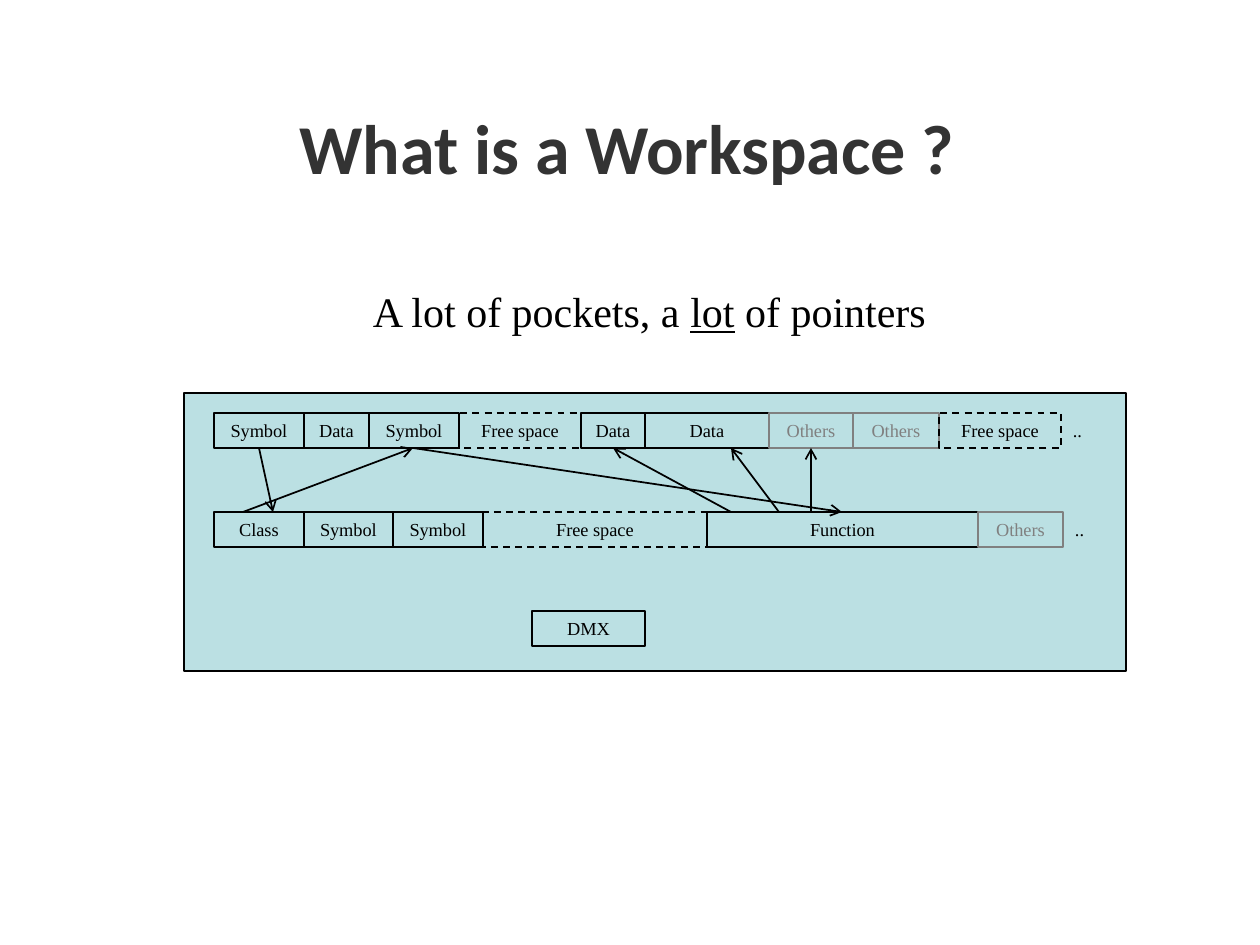
from dataclasses import dataclass

from lxml.etree import SubElement
from pptx import Presentation
from pptx.dml.color import RGBColor
from pptx.enum.dml import MSO_LINE
from pptx.enum.shapes import MSO_CONNECTOR, MSO_SHAPE
from pptx.enum.text import MSO_ANCHOR, PP_ALIGN
from pptx.oxml.ns import qn
from pptx.util import Inches, Pt

SCALE = Inches(1) / 126


@dataclass(frozen=True)
class Theme:
    ink: str = "000000"
    muted: str = "808080"
    heading: str = "333333"
    panel: str = "BBE0E3"
    heading_font: str = "Calibri"
    body_font: str = "Times New Roman"
    title_size: float = 40
    lead_size: float = 24
    label_size: float = 10.5


def px(*values):
    return [round(v * SCALE) for v in values]


class SlideBuilder:
    """Draws styled elements on the current slide."""

    def __init__(self, prs, theme):
        self.theme = theme
        self.slide = prs.slides.add_slide(prs.slide_layouts[5])

    def fill_text(self, sp, runs, size, color, font=None, align=PP_ALIGN.CENTER,
                  anchor=MSO_ANCHOR.MIDDLE, margins=(0, 0, 0, 0), **style):
        tf = sp.text_frame
        left, top, right, bottom = px(*margins)
        frame = dict(word_wrap=True, vertical_anchor=anchor, margin_left=left,
                     margin_top=top, margin_right=right, margin_bottom=bottom)
        for name, value in frame.items():
            setattr(tf, name, value)
        p = tf.paragraphs[0]
        p.alignment = align
        for text, extra in runs:
            r = p.add_run()
            r.text = text
            values = dict(size=Pt(size), name=font or self.theme.body_font, **style) | extra
            for name, value in values.items():
                setattr(r.font, name, value)
            r.font.color.rgb = RGBColor.from_string(color)

    def title(self, text, x, y, w, h):
        sp = self.slide.shapes.title
        sp.left, sp.top, sp.width, sp.height = px(x, y, w, h)
        self.fill_text(sp, [(text, {})], self.theme.title_size, self.theme.heading,
                       self.theme.heading_font, anchor=MSO_ANCHOR.TOP,
                       margins=(12, 9, 12, 6), bold=True)

    def text(self, runs, x, y, w, h, size, **layout):
        sp = self.slide.shapes.add_textbox(*px(x, y, w, h))
        self.fill_text(sp, runs, size, self.theme.ink, **layout)

    def box(self, x, y, w, h, text="", color=None, fill=None, dash=False, weight=1):
        color = color or self.theme.ink
        sp = self.slide.shapes.add_shape(MSO_SHAPE.RECTANGLE, *px(x, y, w, h))
        sp.shadow.inherit = False
        if fill:
            sp.fill.solid()
            sp.fill.fore_color.rgb = RGBColor.from_string(fill)
        else:
            sp.fill.background()
        sp.line.color.rgb = RGBColor.from_string(color)
        sp.line.width = Pt(weight)
        if dash:
            sp.line.dash_style = MSO_LINE.DASH
        if text:
            self.fill_text(sp, [(text, {})], self.theme.label_size, color)

    def memory_row(self, x, y, h, pockets):
        for text, w in pockets:
            color = self.theme.muted if text == "Others" else self.theme.ink
            self.box(x, y, w, h, text, color, dash=text == "Free space")
            x += w
        self.text([("..", {})], x, y, 39, h, self.theme.label_size,
                  align=PP_ALIGN.LEFT, margins=(12, 0, 0, 0))

    def arrow(self, x1, y1, x2, y2):
        sp = self.slide.shapes.add_connector(MSO_CONNECTOR.STRAIGHT, *px(x1, y1, x2, y2))
        sp.line.color.rgb = RGBColor.from_string(self.theme.ink)
        sp.line.width = Pt(1)
        properties = sp.element.spPr
        SubElement(properties.find(qn("a:ln")), qn("a:tailEnd"), type="arrow")
        SubElement(properties, qn("a:effectLst"))


def main():
    prs = Presentation()
    prs.slide_width, prs.slide_height = Inches(10), Inches(7.5)
    theme = Theme()
    s = SlideBuilder(prs, theme)

    s.title("What is a Workspace ?", 60, 96, 1134, 127)
    s.text([("A lot of pockets, a ", {}), ("lot", {"underline": True}), (" of pointers", {})],
           273, 275, 753, 63, theme.lead_size, anchor=MSO_ANCHOR.TOP, margins=(12, 10, 12, 6))

    s.box(184, 393, 942, 278, fill=theme.panel, weight=0.75)
    left, upper, lower, height = 214, 413, 512, 35
    s.memory_row(left, upper, height, [
        ("Symbol", 90), ("Data", 65), ("Symbol", 90), ("Free space", 122), ("Data", 64),
        ("Data", 124), ("Others", 84), ("Others", 86), ("Free space", 122)])
    s.memory_row(left, lower, height, [
        ("Class", 90), ("Symbol", 89), ("Symbol", 90), ("Free space", 224),
        ("Function", 271), ("Others", 85)])
    s.box(532, 611, 113, height, "DMX")

    bottom = upper + height
    for start, end in [(811, 811), (779, 731), (731, 613), (243, 413)]:
        s.arrow(start, lower, end, bottom)
    for start, end in [(413, 842), (259, 273)]:
        s.arrow(start, bottom, end, lower)

    prs.save("out.pptx")


if __name__ == "__main__":
    main()
